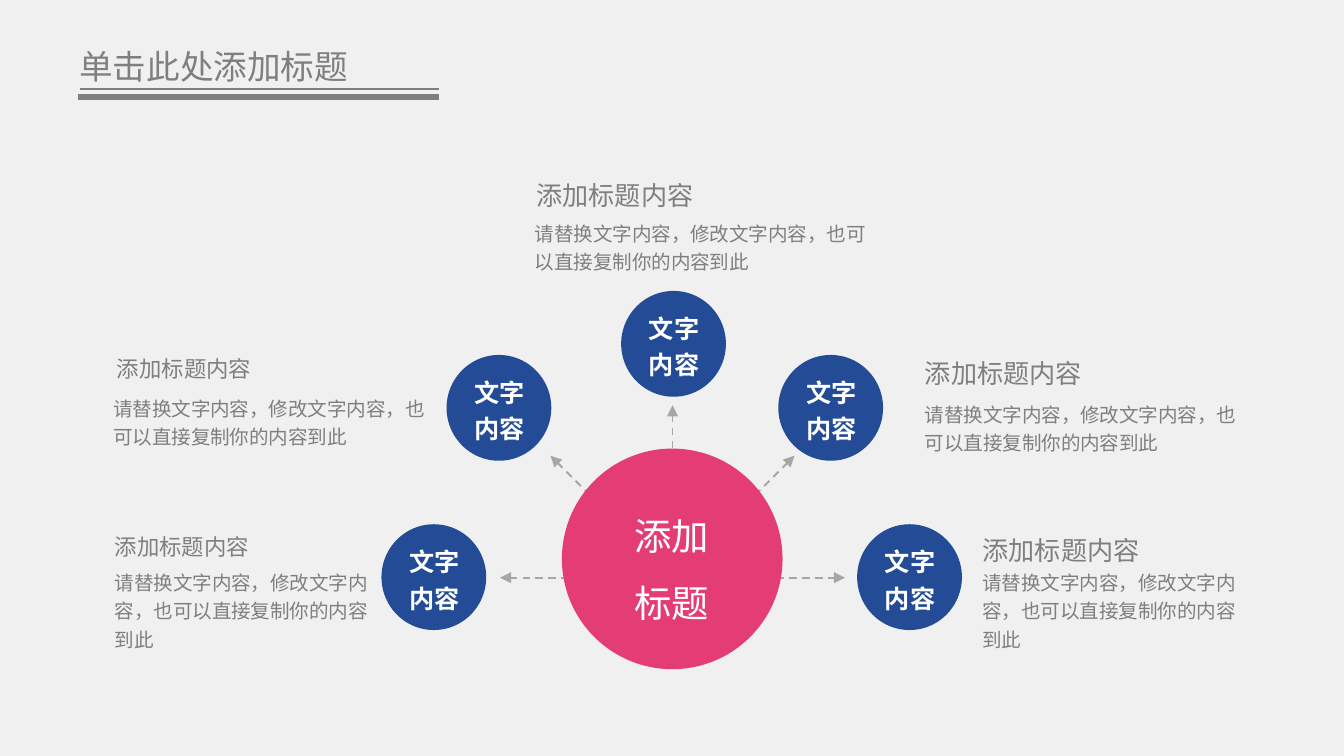
from dataclasses import dataclass
from math import cos, radians, sin

from lxml import etree
from pptx import Presentation
from pptx.dml.color import RGBColor
from pptx.enum.dml import MSO_LINE
from pptx.enum.shapes import MSO_CONNECTOR, MSO_SHAPE
from pptx.enum.text import MSO_ANCHOR, MSO_AUTO_SIZE, PP_ALIGN
from pptx.oxml.ns import qn
from pptx.util import Cm, Pt

STRAIGHT = MSO_CONNECTOR.STRAIGHT
OVAL, DONUT = MSO_SHAPE.OVAL, MSO_SHAPE.DONUT
LEFT, CENTER = PP_ALIGN.LEFT, PP_ALIGN.CENTER
TOP = MSO_ANCHOR.TOP
GROW = MSO_AUTO_SIZE.SHAPE_TO_FIT_TEXT
DASH = MSO_LINE.DASH

COLORS = {
    "background": "F0F0F0",
    "text": "7F7F7F",
    "arrow": "A6A6A6",
    "node": "244B95",
    "core": "E43D76",
    "white": "FFFFFF",
}
LATIN, CJK = "Arial", "Noto Sans CJK SC"
HEADING = [("添加标题", CJK), ("内容", LATIN)]
BODY = [("请替换文字内容，修改文字内容，也可以直接复制你的内容到此", LATIN)]
NODE_LABEL = [("文字内容", LATIN)]
NODE_WIDTH, NODE_HEIGHT = 1.98, 2.0


@dataclass
class Topic:
    """Positions of one node, its heading and its body text, in centimetres."""

    angle: int
    node: tuple
    heading: tuple
    body: tuple
    heading_size: int = 14
    heading_wraps: bool = True


TOPICS = [
    Topic(180, (7.21, 9.91), (2.17, 9.98, 5.77, 0.56), (2.17, 10.71, 5.05, 1.63), 12),
    Topic(135, (8.44, 6.71), (2.21, 6.61, 5.77, 0.56), (2.14, 7.41, 6.15, 1.04), 12),
    Topic(90, (11.74, 5.5), (10.14, 3.28, 3, 0.66), (10.11, 4.1, 6.3, 1.04),
          heading_wraps=False),
    Topic(45, (14.71, 6.71), (17.48, 6.63, 5.77, 0.66), (17.48, 7.52, 6.15, 1.04)),
    Topic(0, (16.2, 9.91), (18.57, 9.98, 5.77, 0.66), (18.57, 10.71, 5.05, 1.63)),
]


def color(name):
    """Return the palette colour of that name."""
    return RGBColor.from_string(COLORS[name])


def write_text(shape, paragraphs, *, size, ink="text", bold=False, align=LEFT,
               spacing=1.2, insets=(0, 0), wrap=True):
    """Fill a shape with paragraphs, each a list of (text, font) runs."""
    frame = shape.text_frame
    frame.word_wrap, frame.auto_size, frame.vertical_anchor = wrap, GROW, TOP
    frame.margin_left = frame.margin_right = Cm(insets[0])
    frame.margin_top = frame.margin_bottom = Cm(insets[1])
    for index, runs in enumerate(paragraphs):
        paragraph = frame.add_paragraph() if index else frame.paragraphs[0]
        paragraph.alignment, paragraph.line_spacing = align, spacing
        for text, typeface in runs:
            run = paragraph.add_run()
            run.text = text
            font = run.font
            font.size, font.bold, font.name = Pt(size), bold, typeface
            font.color.rgb = color(ink)
            east_asian = etree.SubElement(run._r.get_or_add_rPr(), qn("a:ea"))
            east_asian.set("typeface", typeface)


def add_text(slide, box, paragraphs, **text_format):
    """Add a text box at a box given in centimetres."""
    shape = slide.shapes.add_textbox(*map(Cm, box))
    write_text(shape, paragraphs, **text_format)


def add_round(slide, kind, box, fill):
    """Add a borderless round shape and return it."""
    shape = slide.shapes.add_shape(kind, *map(Cm, box))
    shape.shadow.inherit = False
    shape.fill.solid()
    shape.fill.fore_color.rgb = color(fill)
    shape.line.fill.background()
    return shape


def add_line(slide, start, end, ink, width, arrow=False):
    """Add a plain rule or a dashed arrow between two points."""
    connector = slide.shapes.add_connector(STRAIGHT, *map(Cm, (*start, *end)))
    line = connector.line
    line.color.rgb = color(ink)
    line.width = Pt(width)
    if arrow:
        line.dash_style = DASH
        etree.SubElement(line._get_or_add_ln(), qn("a:tailEnd")).set("type", "triangle")
    etree.SubElement(connector._element.spPr, qn("a:effectLst"))


def build_title(slide, left, top, width, height):
    """Place the slide title and its double underline."""
    title = slide.shapes.title
    title.left, title.top, title.width, title.height = map(Cm, (left, top, width, height))
    write_text(title, [[("单击此处添加标题", CJK)]], size=18, spacing=1,
               insets=(0.25, 0.13), wrap=False)
    right = left + 7.04
    add_line(slide, (left + 0.26, top + 0.94), (right, top + 0.94), "text", 0.75)
    add_line(slide, (left + 0.23, top + 1.09), (right, top + 1.09), "text", 3)


def build_arrows(slide, center_x, center_y, radius):
    """Fan the dashed arrows out from the centre towards the nodes."""
    for topic in TOPICS:
        angle = radians(topic.angle)
        tip = (center_x + radius * cos(angle), center_y - radius * sin(angle))
        add_line(slide, (center_x, center_y), tip, "arrow", 1, arrow=True)


def build_core(slide, left, top, diameter):
    """Place the central disc, its ring and its label."""
    inset = 0.34
    inner = diameter - 2 * inset
    add_round(slide, OVAL, (left + inset, top + inset, inner, inner), "core")
    ring = add_round(slide, DONUT, (left, top, diameter, diameter), "core")
    ring.adjustments[0] = 0.1
    add_text(slide, (left + 0.71, top + 0.66, 2.72, 2.82),
             [[("添加", CJK)], [("标题", CJK)]], size=20, ink="white",
             align=CENTER, spacing=1.5, insets=(0.25, 0.13))


def build_topic(slide, topic):
    """Place one node with its label, heading and body."""
    left, top = topic.node
    add_round(slide, OVAL, (left, top, NODE_WIDTH, NODE_HEIGHT), "node")
    add_text(slide, (left + 0.05, top + 0.18, 1.9, 1.65), [NODE_LABEL], size=13.5,
             ink="white", bold=True, align=CENTER, insets=(0.27, 0.13))
    add_text(slide, topic.body, [BODY], size=10.5)
    add_text(slide, topic.heading, [HEADING], size=topic.heading_size,
             wrap=topic.heading_wraps)


def main():
    """Build the slide and save it."""
    presentation = Presentation()
    presentation.slide_width, presentation.slide_height = Cm(25.4), Cm(14.29)
    slide = presentation.slides.add_slide(presentation.slide_layouts[5])
    slide.background.fill.solid()
    slide.background.fill.fore_color.rgb = color("background")
    build_title(slide, 1.25, 0.74, 5.64, 1.02)
    build_arrows(slide, 12.71, 10.92, 3.26)
    build_core(slide, 10.62, 8.48, 4.17)
    for topic in TOPICS:
        build_topic(slide, topic)
    presentation.save("out.pptx")


if __name__ == "__main__":
    main()
